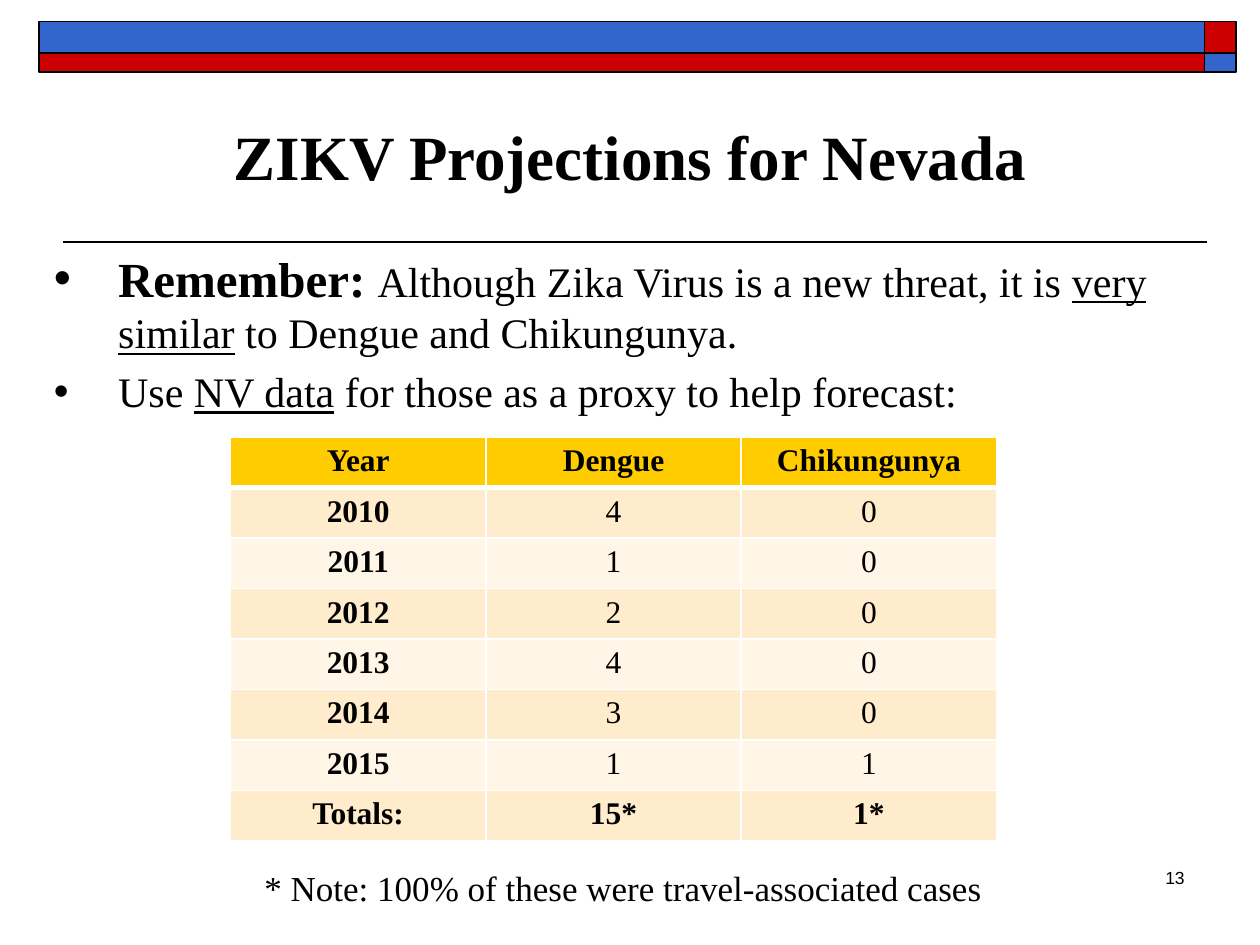
from lxml import etree
from pptx import Presentation
from pptx.dml.color import RGBColor
from pptx.enum.shapes import MSO_CONNECTOR as CONN, MSO_SHAPE as SHAPE
from pptx.enum.text import MSO_ANCHOR as ANCHOR, PP_ALIGN as ALIGN
from pptx.oxml.ns import qn
from pptx.util import Inches, Pt

SERIF = "Times New Roman"
BLACK, BLUE, RED = "000000", "3366CC", "CC0000"


def rgb(color):
    return RGBColor.from_string(color)


def add_run(p, text, size, bold=False, underline=False, font=SERIF):
    r = p.add_run()
    r.text = text
    r.font.name, r.font.size = font, Pt(size)
    r.font.bold, r.font.underline = bold, underline
    r.font.color.rgb = rgb(BLACK)


prs = Presentation()
prs.slide_width, prs.slide_height = Inches(10), Inches(7.5)
s = prs.slides.add_slide(prs.slide_layouts[6])

# Rule under the title
line = s.shapes.add_connector(CONN.STRAIGHT, Inches(9.58), Inches(1.92), Inches(0.5), Inches(1.92))
line.line.color.rgb, line.line.width = rgb(BLACK), Pt(1)
etree.SubElement(line._element.spPr, qn("a:effectLst"))

# Banner: two bands, each with an end block in the other colour
for top, height, band, block in [(0.17, 0.25, BLUE, RED), (0.42, 0.15, RED, BLUE)]:
    for left, width, color in [(0.31, 9.25, band), (9.56, 0.25, block)]:
        sp = s.shapes.add_shape(SHAPE.RECTANGLE, Inches(left), Inches(top), Inches(width), Inches(height))
        sp.shadow.inherit = False
        sp.fill.solid()
        sp.fill.fore_color.rgb = rgb(color)
        sp.line.color.rgb, sp.line.width = rgb(BLACK), Pt(1)

# Title
tf = s.shapes.add_textbox(Inches(0.5), Inches(0.83), Inches(9), Inches(0.75)).text_frame
tf.word_wrap = True
tf.vertical_anchor = ANCHOR.BOTTOM
p = tf.paragraphs[0]
p.alignment = ALIGN.CENTER
add_run(p, "ZIKV Projections for Nevada", 36, bold=True)

# Bullets: each run is text, size, bold, underline
bullets = [
    [("Remember: ", 28, True, False),
     ("Although Zika Virus is a new threat, it is ", 24, False, False),
     ("very similar", 24, False, True),
     (" to Dengue and Chikungunya.", 24, False, False)],
    [("Use ", 24, False, False),
     ("NV data", 24, False, True),
     (" for those as a proxy to help forecast:", 24, False, False)],
]
tf = s.shapes.add_textbox(Inches(0.33), Inches(1.92), Inches(9.5), Inches(1.17)).text_frame
tf.word_wrap = True
for i, runs in enumerate(bullets):
    p = tf.add_paragraph() if i else tf.paragraphs[0]
    p.space_before = Pt(0.2 * runs[0][1])
    pPr = p._p.get_or_add_pPr()
    pPr.set("marL", str(Inches(0.51)))
    pPr.set("indent", str(Inches(-0.51)))
    etree.SubElement(pPr, qn("a:buFont"), typeface="Arial")
    etree.SubElement(pPr, qn("a:buChar"), char="•")
    for run in runs:
        add_run(p, *run)

# Page number
tf = s.shapes.add_textbox(Inches(7.42), Inches(6.83), Inches(2.08), Inches(0.5)).text_frame
tf.word_wrap = True
p = tf.paragraphs[0]
p.alignment = ALIGN.RIGHT
add_run(p, "13", 10, font="Arial")

# Table of cases: bold header, first column and totals
rows = [
    ("Year", "Dengue", "Chikungunya"),
    ("2010", "4", "0"),
    ("2011", "1", "0"),
    ("2012", "2", "0"),
    ("2013", "4", "0"),
    ("2014", "3", "0"),
    ("2015", "1", "1"),
    ("Totals:", "15*", "1*"),
]
last = len(rows) - 1
table = s.shapes.add_table(len(rows), 3, Inches(1.83), Inches(3.47),
                           Inches(6.08), Inches(0.36 * len(rows))).table
for i, row in enumerate(rows):
    table.rows[i].height = Inches(0.36)
    fill = "FFCC00" if i == 0 else "FFECCC" if i % 2 else "FFF6E7"
    for j, text in enumerate(row):
        cell = table.cell(i, j)
        p = cell.text_frame.paragraphs[0]
        p.alignment = ALIGN.CENTER
        add_run(p, text, 18, bold=i in (0, last) or j == 0)
        # White borders, thicker between header and body
        tcPr = cell._tc.get_or_add_tcPr()
        for side in "LRTB":
            thick = (i, side) in ((0, "B"), (1, "T"))
            ln = etree.SubElement(tcPr, qn(f"a:ln{side}"), w=str(Pt(3 if thick else 1)))
            solid = etree.SubElement(ln, qn("a:solidFill"))
            etree.SubElement(solid, qn("a:srgbClr"), val="FFFFFF")
        cell.fill.solid()
        cell.fill.fore_color.rgb = rgb(fill)

# Footnote
tf = s.shapes.add_textbox(Inches(2), Inches(6.83), Inches(5.93), Inches(0.44)).text_frame
tf.word_wrap = False
add_run(tf.paragraphs[0], "* Note: 100% of these were travel-associated cases", 20)

prs.save("out.pptx")
